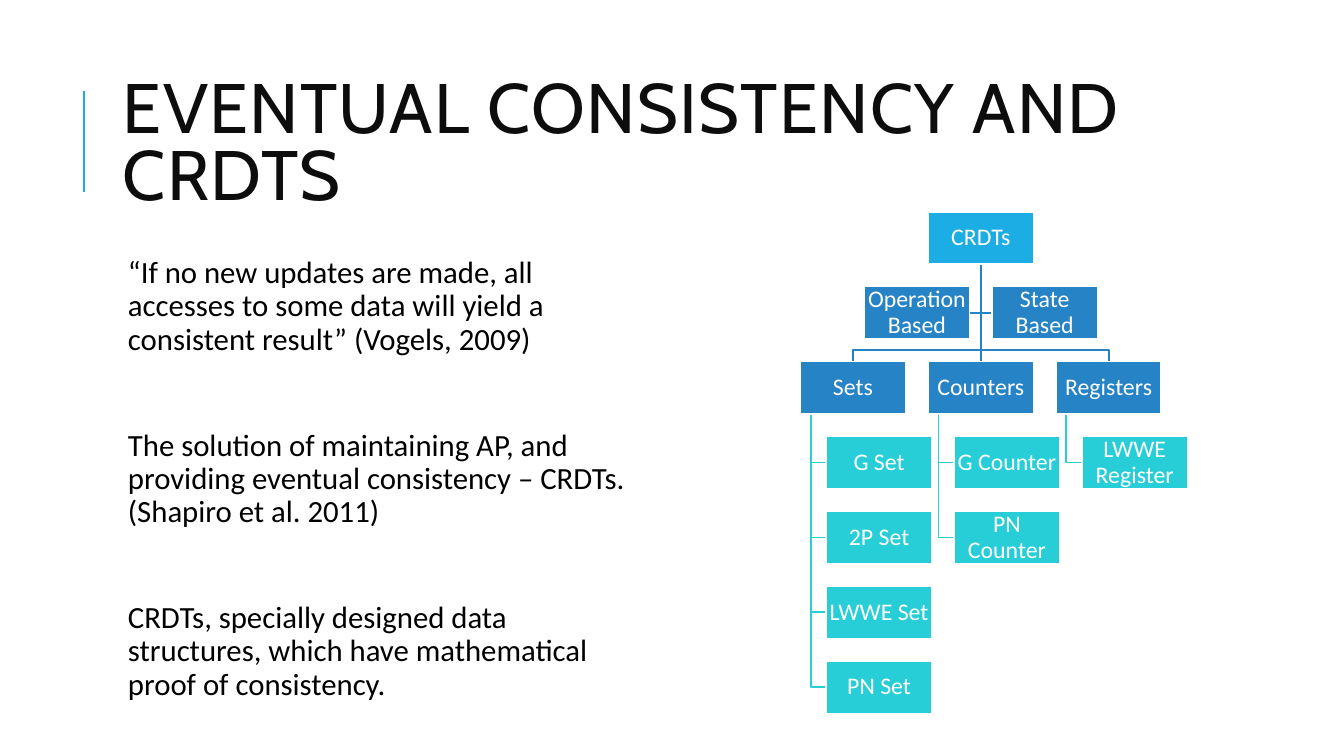
"""Build the slide on eventual consistency and the CRDT family tree."""
import dataclasses

import pptx
import pptx.dml.color
import pptx.enum.shapes
import pptx.enum.text
import pptx.oxml
import pptx.oxml.ns
import pptx.util

Pt = pptx.util.Pt
Align = pptx.enum.text.PP_ALIGN
Anchor = pptx.enum.text.MSO_ANCHOR


@dataclasses.dataclass(frozen=True)
class Theme:
    """Colours, fonts and type sizes."""
    accent: str = "1CADE4"
    branch: str = "2683C6"
    leaf: str = "27CED7"
    heading: str = "0D0D0D"
    body: str = "000000"
    white: str = "FFFFFF"
    heading_font: str = "Cabin"
    body_font: str = "Calibri"
    heading_size: float = 50
    body_size: float = 22
    box_size: float = 17


def rgb(code):
    """Turn a hex code into a colour."""
    return pptx.dml.color.RGBColor.from_string(code)


def write_text(frame, *paragraphs, font, size, color, align=Align.LEFT,
               anchor=Anchor.TOP, insets=(7.2, 3.6, 7.2, 3.6),
               leading=0.9, gap=0, tracking=0):
    """Fill a text frame with evenly formatted paragraphs."""
    frame.word_wrap = True
    frame.auto_size = pptx.enum.text.MSO_AUTO_SIZE.NONE
    frame.vertical_anchor = anchor
    (frame.margin_left, frame.margin_top,
     frame.margin_right, frame.margin_bottom) = map(Pt, insets)
    for index, words in enumerate(paragraphs):
        paragraph = frame.add_paragraph() if index else frame.paragraphs[0]
        paragraph.alignment = align
        paragraph.line_spacing = leading
        paragraph.space_before = Pt(gap if index else 0)
        paragraph.space_after = Pt(0)
        run = paragraph.add_run()
        run.text = words
        run.font.name = font
        run.font.size = Pt(size)
        run.font.color.rgb = rgb(color)
        if tracking:
            run.font._element.set("spc", str(tracking * 100))


class SlideBuilder:
    """Hold the theme and current slide, and draw each kind of element."""

    def __init__(self, slide, theme):
        """Keep the slide and theme."""
        self.slide = slide
        self.theme = theme

    def title(self, words, left, top, width, height):
        """Place and format the title placeholder."""
        heading = self.slide.shapes.title
        heading.left, heading.top = Pt(left), Pt(top)
        heading.width, heading.height = Pt(width), Pt(height)
        write_text(heading.text_frame, words, font=self.theme.heading_font,
                   size=self.theme.heading_size, color=self.theme.heading,
                   anchor=Anchor.MIDDLE, leading=0.8, tracking=1)

    def body(self, paragraphs, left, top, width, height):
        """Add the running text."""
        area = self.slide.shapes.add_textbox(*map(Pt, (left, top, width, height)))
        write_text(area.text_frame, *paragraphs, font=self.theme.body_font,
                   size=self.theme.body_size, color=self.theme.body,
                   insets=(10.8, 3.6, 3.6, 3.6), gap=52)

    def line(self, start, end, color, weight=1.25):
        """Add a straight line."""
        rule = self.slide.shapes.add_connector(
            pptx.enum.shapes.MSO_CONNECTOR.STRAIGHT, *map(Pt, start + end))
        rule.line.color.rgb = rgb(color)
        rule.line.width = Pt(weight)
        rule._element.spPr.append(pptx.oxml.parse_xml(
            "<a:effectLst %s/>" % pptx.oxml.ns.nsdecls("a")))

    def bend(self, points, color, weight=1.25):
        """Add an open line with corners."""
        start, *corners = [tuple(map(Pt, point)) for point in points]
        outline = self.slide.shapes.build_freeform(*start, scale=1.0)
        outline.add_line_segments(corners, close=False)
        branch = outline.convert_to_shape()
        branch.shadow.inherit = False
        branch.fill.background()
        branch.line.color.rgb = rgb(color)
        branch.line.width = Pt(weight)

    def box(self, words, left, top, width, height, color):
        """Add a labelled box."""
        node = self.slide.shapes.add_shape(
            pptx.enum.shapes.MSO_SHAPE.RECTANGLE,
            *map(Pt, (left, top, width, height)))
        node.shadow.inherit = False
        node.fill.solid()
        node.fill.fore_color.rgb = rgb(color)
        node.line.color.rgb = rgb(self.theme.white)
        node.line.width = Pt(1.25)
        write_text(node.text_frame, words, font=self.theme.body_font,
                   size=self.theme.box_size, color=self.theme.white,
                   align=Align.CENTER, anchor=Anchor.MIDDLE, insets=(0.7,) * 4)


QUOTES = (
    "“If no new updates are made, all accesses to some data will yield a "
    "consistent result” (Vogels, 2009)",
    "The solution of maintaining AP, and providing eventual consistency – "
    "CRDTs. (Shapiro et al. 2011)",
    "CRDTs, specially designed data structures, which have mathematical "
    "proof of consistency.",
)
APPROACHES = {"Operation Based": 0.5, "State Based": 1.5}
FAMILIES = {
    "Sets": ("G Set", "2P Set", "LWWE Set", "PN Set"),
    "Counters": ("G Counter", "PN Counter"),
    "Registers": ("LWWE Register",),
}


def draw_tree(builder):
    """Draw the CRDT tree, with its branches behind its boxes."""
    theme = builder.theme
    tree_left, tree_top = 571.6, 151.2
    column_step, row_step = 91.3, 53.5
    box_width, box_height = 75.4, 37.4
    stem_inset, leaf_indent, bus_rise = 7.5, 18.7, 8.2

    def place(column, row):
        return tree_left + column * column_step, tree_top + row * row_step

    root_left, root_top = place(1, 0)
    root_x, root_bottom = root_left + box_width / 2, root_top + box_height
    boxes = [("CRDTs", root_left, root_top, theme.accent)]

    for approach, column in APPROACHES.items():
        left, top = place(column, 1)
        edge = left + box_width if column < 1 else left
        middle = top + box_height / 2
        builder.bend([(root_x, root_bottom), (root_x, middle), (edge, middle)],
                     theme.branch)
        boxes.append((approach, left, top, theme.branch))

    for column, (family, members) in enumerate(FAMILIES.items()):
        left, top = place(column, 2)
        center, bus = left + box_width / 2, top - bus_rise
        if column == 1:
            builder.line((root_x, root_bottom), (root_x, top), theme.branch)
        else:
            builder.bend([(root_x, root_bottom), (root_x, bus),
                          (center, bus), (center, top)], theme.branch)
        boxes.append((family, left, top, theme.branch))
        stem, leaf_left = left + stem_inset, left + leaf_indent
        for row, member in enumerate(members, start=3):
            leaf_top = place(column, row)[1]
            middle = leaf_top + box_height / 2
            builder.bend([(stem, top + box_height), (stem, middle),
                          (leaf_left, middle)], theme.leaf)
            boxes.append((member, leaf_left, leaf_top, theme.leaf))

    for words, left, top, color in boxes:
        builder.box(words, left, top, box_width, box_height, color)


def main():
    """Build and save the presentation."""
    deck = pptx.Presentation()
    deck.slide_width, deck.slide_height = Pt(960), Pt(540)
    builder = SlideBuilder(deck.slides.add_slide(deck.slide_layouts[5]), Theme())
    builder.line((59.8, 136.8), (59.8, 64.8), builder.theme.accent, weight=1.5)
    builder.title("EVENTUAL CONSISTENCY AND CRDTS", 80.6, 46, 765.4, 118)
    builder.body(QUOTES, 80.6, 180, 382.3, 360)
    draw_tree(builder)
    deck.save("out.pptx")


if __name__ == "__main__":
    main()
